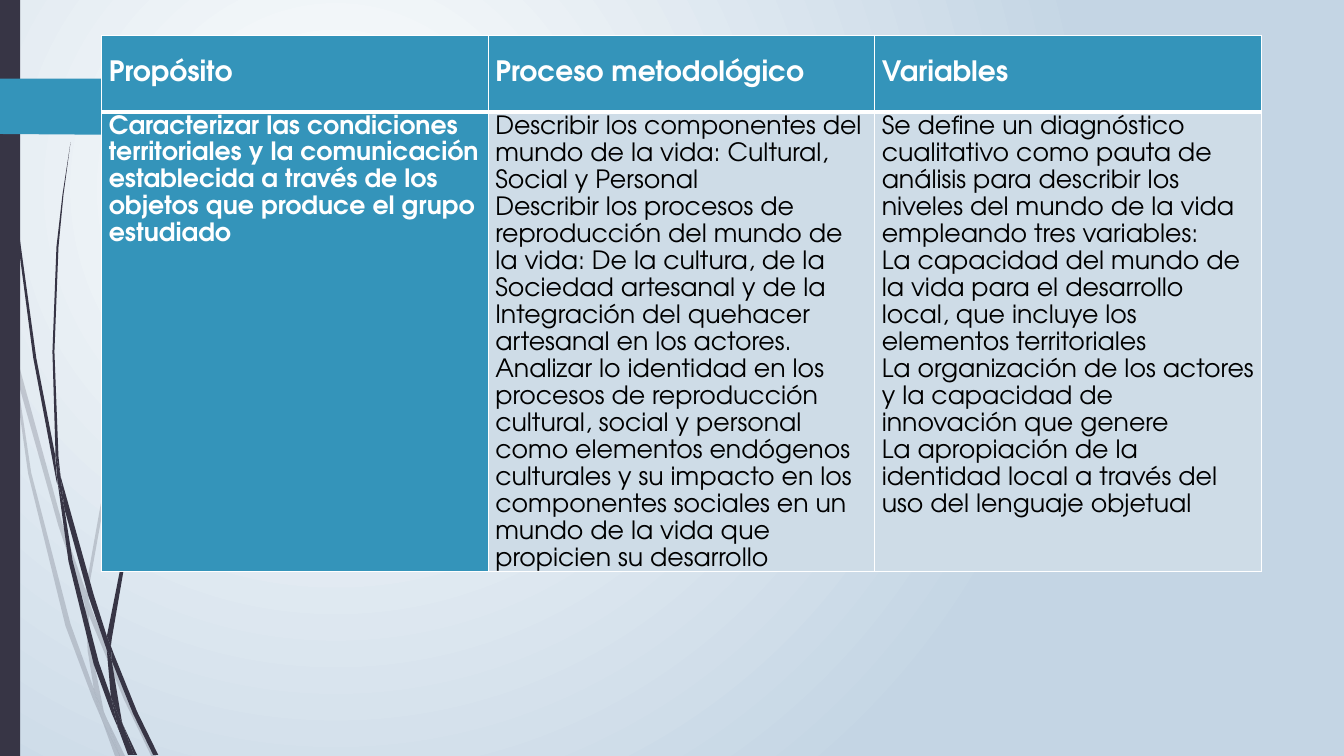
from lxml import etree
from pptx import Presentation
from pptx.dml.color import RGBColor
from pptx.enum.shapes import MSO_SHAPE
from pptx.oxml.ns import qn
from pptx.util import Inches, Pt

RECT = MSO_SHAPE.RECTANGLE
FONT = "TeX Gyre Adventor"
COLORS = {"dark": "373545", "teal": "3494BA", "pale": "CEDCE7",
          "sky": "C4D5E4", "white": "FFFFFF", "black": "000000"}

# Outlines of the grass blades: x, y pairs in inches
FAINT = [
    [(.11, 3.5), (.09, 3.22), (0, 2.82), (0, 2.99), (.1, 3.44)],
    [(.58, 5.22), (.84, 5.99), (.85, 5.86), (.62, 5.2), (.14, 3.45), (.17, 3.76)],
    [(.92, 6.07), (.88, 5.96), (.88, 6.1), (1.23, 6.94), (1.5, 7.5), (1.55, 7.5),
     (1.27, 6.92)],
    [(1.19, 7.5), (1.24, 7.5), (1.05, 7.11)],
    [(.93, 6.83), (.7, 6.19), (.31, 4.69), (.17, 3.76), (.11, 3.5), (.28, 4.7),
     (.65, 6.21), (.92, 6.93), (1.01, 7.14), (.99, 7.07)],
    [(.84, 5.99), (.87, 6.46), (.93, 6.83), (.96, 6.92), (1.05, 7.11), (1.03, 7.06),
     (.91, 6.46), (.88, 6.1), (.88, 6.08)],
    [(.88, 5.84), (1.1, 4.62), (1.6, 3.49), (2.29, 2.45), (2.68, 1.98), (2.9, 1.75),
     (3.12, 1.54), (3.12, 1.53), (2.89, 1.75), (2.68, 1.97), (2.28, 2.44),
     (1.58, 3.48), (1.07, 4.61), (.85, 5.84), (.85, 5.86), (.88, 5.96)],
    [(1.01, 7.14), (1.14, 7.5), (1.19, 7.5)],
    [(.88, 6.08), (.88, 6.1), (.88, 5.96), (.85, 5.86), (.84, 5.99)],
    [(.96, 6.92), (.93, 6.83), (.99, 7.07), (1.01, 7.14), (1.19, 7.5), (1.05, 7.11)],
]
SOLID = [
    [(.07, 1.1), (.17, 2.33), (.33, 3.55), (.56, 4.77), (.57, 4.81), (.55, 4.57),
     (.55, 4.53), (.36, 3.55), (.19, 2.32), (.08, 1.09), (.05, .48), (.04, 0),
     (.03, 0), (.04, .48)],
    [(.88, 5.92), (1.06, 6.45), (1.06, 6.31), (.93, 5.9), (.6, 4.72), (.64, 5.05)],
    [(1.13, 6.49), (1.1, 6.41), (1.11, 6.56), (1.32, 7.08), (1.52, 7.49),
     (1.57, 7.49), (1.36, 7.06)],
    [(1.1, 6.91), (.98, 6.57), (.72, 5.56), (.64, 5.05), (.57, 4.77), (.68, 5.57),
     (.93, 6.59), (1.11, 7.08), (1.17, 7.22), (1.16, 7.17)],
    [(.6, 4.72), (.58, 4.53), (.54, 3.49), (.58, 2.45), (.63, 1.93), (.7, 1.41),
     (.62, 1.93), (.56, 2.45), (.52, 3.49), (.55, 4.49)],
    [(1.33, 7.49), (1.36, 7.49), (1.22, 7.19)],
    [(.57, 4.77), (.64, 5.05), (.6, 4.72), (.55, 4.49), (.55, 4.53)],
    [(1.11, 6.33), (1.25, 5.52), (1.58, 4.76), (2.05, 4.06), (2.31, 3.74),
     (2.45, 3.59), (2.61, 3.44), (2.45, 3.58), (2.31, 3.73), (2.04, 4.05),
     (1.56, 4.74), (1.22, 5.51), (1.06, 6.31), (1.1, 6.41)],
    [(1.17, 7.22), (1.27, 7.49), (1.31, 7.49)],
    [(1.06, 6.45), (1.1, 6.91), (1.16, 7.06), (1.22, 7.19), (1.21, 7.16),
     (1.11, 6.56), (1.09, 6.51)],
    [(1.06, 6.45), (1.09, 6.51), (1.11, 6.56), (1.1, 6.41), (1.06, 6.31)],
    [(1.16, 7.06), (1.1, 6.91), (1.16, 7.17), (1.17, 7.22), (1.3, 7.49),
     (1.33, 7.49), (1.22, 7.19)],
]
ARROW = [(0, .78), (1.46, .78), (1.48, .79), (1.73, 1.04), (1.73, 1.08),
         (1.48, 1.33), (1.46, 1.34), (0, 1.33)]

HEADS = ["Propósito", "Proceso metodológico", "Variables"]
BODY = [
    ["Caracterizar las condiciones territoriales y la comunicación establecida "
     "a través de los objetos que produce el grupo estudiado"],
    ["Describir los componentes del mundo de la vida: Cultural, Social y Personal",
     "Describir los procesos de reproducción del mundo de la vida: De la cultura, "
     "de la Sociedad artesanal y de la Integración del quehacer artesanal en los "
     "actores.",
     "Analizar lo identidad en los procesos de reproducción cultural, social y "
     "personal como elementos endógenos culturales y su impacto en los componentes "
     "sociales en un mundo de la vida que propicien su desarrollo"],
    ["Se define un diagnóstico cualitativo como pauta de análisis para describir "
     "los niveles del mundo de la vida empleando tres variables:",
     "La capacidad del mundo de la vida para el desarrollo local, que incluye los "
     "elementos territoriales",
     "La organización de los actores y la capacidad de innovación que genere",
     "La apropiación de la identidad local a través del uso del lenguaje objetual"],
]


def rgb(name):
    return RGBColor.from_string(COLORS[name])


def paint(shape, color):
    shape.shadow.inherit = False
    shape.fill.solid()
    shape.fill.fore_color.rgb = rgb(color)
    shape.line.fill.background()


def add_shade(slide):
    """Fill the background with a round gradient, lightest at upper left."""
    fill = slide.background.fill
    fill.gradient()
    for stop, color, place in zip(fill.gradient_stops, ("white", "sky"), (0, 1)):
        stop.color.rgb = rgb(color)
        stop.position = place
    grad = slide.background._cSld.find(".//" + qn("a:gradFill"))
    line = grad.find(qn("a:lin"))
    ring = etree.Element(qn("a:path"), path="circle")
    etree.SubElement(ring, qn("a:fillToRect"),
                     l="50000", t="50000", r="100000", b="100000")
    grad.replace(line, ring)


def add_outline(shapes, points, color, alpha=100):
    spots = [(Inches(x), Inches(y)) for x, y in points]
    pen = shapes.build_freeform(*spots[0])
    pen.add_line_segments(spots[1:], close=True)
    shape = pen.convert_to_shape()
    paint(shape, color)
    if alpha < 100:
        tint = shape._element.spPr.find(".//" + qn("a:srgbClr"))
        etree.SubElement(tint, qn("a:alpha"), val=str(alpha * 1000))


def add_blades(slide, blades, alpha):
    group = slide.shapes.add_group_shape()
    for points in blades:
        add_outline(group.shapes, points, "dark", alpha)


def add_edges(cell, top, bottom):
    props = cell._tc.get_or_add_tcPr()
    for side, width in (("L", 1), ("R", 1), ("T", top), ("B", bottom)):
        line = etree.SubElement(props, qn("a:ln" + side), w=str(Pt(width)))
        fill = etree.SubElement(line, qn("a:solidFill"))
        etree.SubElement(fill, qn("a:srgbClr"), val=COLORS["white"])


def fill_cell(cell, lines, head, strong):
    add_edges(cell, *((1, 3) if head else (3, 1)))
    cell.fill.solid()
    cell.fill.fore_color.rgb = rgb("teal" if strong else "pale")
    cell.margin_left = cell.margin_right = Inches(.07)
    cell.margin_top = cell.margin_bottom = 0
    cell.text_frame.text = "\n".join(lines)
    for par in cell.text_frame.paragraphs:
        par.line_spacing = 2.0 if head else 1.15
        par.space_after = Pt(10 if head else 0)
        for run in par.runs:
            run.font.name = FONT
            run.font.size = Pt(20 if head else 18)
            run.font.bold = strong
            run.font.color.rgb = rgb("white" if strong else "black")


def add_grid(slide):
    frame = slide.shapes.add_table(2, 3, Inches(1.01), Inches(.35),
                                   Inches(11.5), Inches(4.91))
    table = frame.table
    table.horz_banding = False
    for row, high in zip(table.rows, (.76, 4.15)):
        row.height = Inches(high)
    for col, (head, lines) in enumerate(zip(HEADS, BODY)):
        fill_cell(table.cell(0, col), [head], True, True)
        fill_cell(table.cell(1, col), lines, False, col == 0)


def main():
    prs = Presentation()
    prs.slide_width, prs.slide_height = Inches(13.33), Inches(7.5)
    slide = prs.slides.add_slide(prs.slide_layouts[6])
    add_shade(slide)
    add_blades(slide, FAINT, 20)
    add_blades(slide, SOLID, 100)
    bar = slide.shapes.add_shape(RECT, 0, 0, Inches(.2), Inches(7.5))
    paint(bar, "dark")
    add_outline(slide.shapes, ARROW, "teal")
    add_grid(slide)
    prs.save("out.pptx")


if __name__ == "__main__":
    main()
